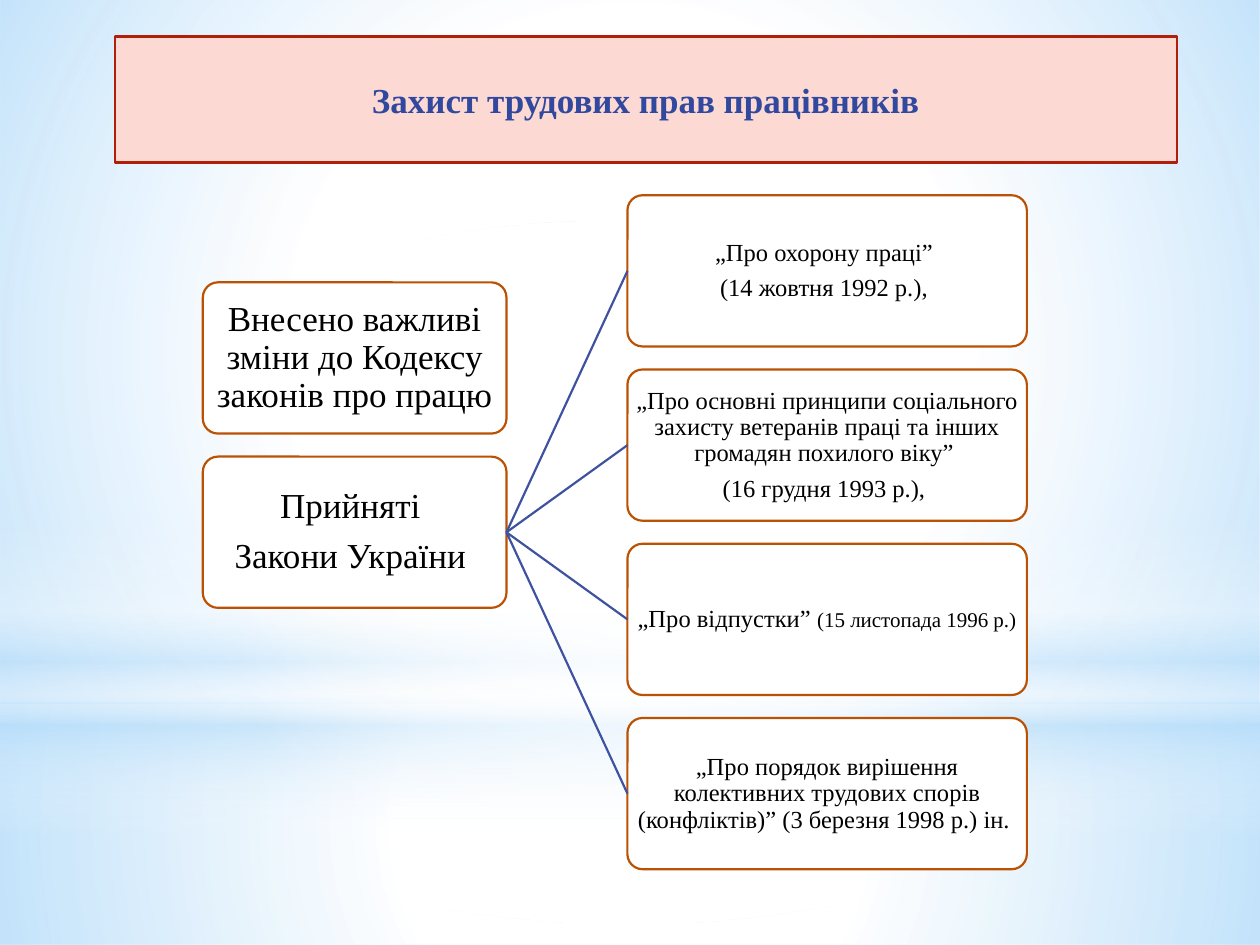
from dataclasses import dataclass

from lxml import etree
from pptx import Presentation
from pptx import util as u
from pptx.dml.color import RGBColor
from pptx.enum import shapes, text
from pptx.oxml import parse_xml
from pptx.oxml.ns import nsdecls, qn


@dataclass(frozen=True)
class Theme:
    font: str = "Times New Roman"
    ink: str = "000000"
    white: str = "FFFFFF"
    sky: str = "B4DCFA"
    card_line: str = "BB5203"
    link: str = "3E52A0"
    ribbon: str = "FCD9D3"
    ribbon_line: str = "B01F07"
    title: str = "31489F"
    large: float = 20
    medium: float = 14
    small: float = 12
    stroke: float = 1.25


theme = Theme()
rgb = RGBColor.from_string


def gradient(stops, direction):
    """Gradient fill from (position %, colour, opacity %) stops."""
    marks = "".join(
        f'<a:gs pos="{pos * 1000}"><a:srgbClr val="{color}">'
        f'<a:alpha val="{opacity * 1000}"/></a:srgbClr></a:gs>'
        for pos, color, opacity in stops)
    return parse_xml(f'<a:gradFill {nsdecls("a")} rotWithShape="1">'
                     f'<a:gsLst>{marks}</a:gsLst>{direction}</a:gradFill>')


def write(shape, paragraphs, color=theme.ink, bold=False, spacing=None, after=0, inset=0.01):
    """Fill a shape with paragraphs, each a list of (text, size) runs."""
    frame = shape.text_frame
    frame.word_wrap = True
    frame.auto_size = text.MSO_AUTO_SIZE.NONE
    frame.vertical_anchor = text.MSO_ANCHOR.MIDDLE
    frame.margin_left = frame.margin_right = u.Inches(inset)
    frame.margin_top = frame.margin_bottom = u.Inches(min(inset, 0.05))
    for i, runs in enumerate(paragraphs):
        para = frame.add_paragraph() if i else frame.paragraphs[0]
        para.alignment = text.PP_ALIGN.CENTER
        para.line_spacing = spacing
        para.space_after = u.Pt(after * runs[0][1])
        for words, size in runs:
            run = para.add_run()
            run.text = words
            run.font.name, run.font.size, run.font.bold = theme.font, u.Pt(size), bold
            run.font.color.rgb = rgb(color)


prs = Presentation()
prs.slide_width, prs.slide_height = u.Inches(10), u.Inches(7.5)
slide = prs.slides.add_slide(prs.slide_layouts[5])
slide.background.fill.solid()
slide.background.fill.fore_color.rgb = rgb(theme.white)

# Backdrop: horizon glow, as shares of the slide height
radial = ('<a:path path="circle"><a:fillToRect l="50000" t="50000" '
          'r="50000" b="50000"/></a:path>')
vertical = '<a:lin ang="5400000" scaled="0"/>'
white, sky = theme.white, theme.sky
rect, oval = shapes.MSO_SHAPE.RECTANGLE, shapes.MSO_SHAPE.OVAL
horizon = 0.744
backdrop = [
    (rect, horizon, 1 - horizon, [(0, white, 91), (37, white, 76), (100, sky, 79)], radial),
    (rect, 0, horizon, [(0, white, 89), (48, white, 62), (100, sky, 79)], radial),
    (rect, 0.55, 0.333, [(0, white, 0), (29, white, 30), (45, sky, 40), (55, white, 26),
                         (65, sky, 60), (100, white, 0)], vertical),
    (oval, 0.233, horizon, [(0, white, 100), (56, white, 0)], radial),
]
for kind, top, height, stops, direction in backdrop:
    layer = slide.shapes.add_shape(kind, 0, int(top * prs.slide_height),
                                   prs.slide_width, int(height * prs.slide_height))
    layer.shadow.inherit = False
    layer.line.fill.background()
    layer.fill.background()
    no_fill = layer._element.spPr.find(qn("a:noFill"))
    layer._element.spPr.replace(no_fill, gradient(stops, direction))

# Cards: (left, width) columns; rows may be half steps
first_row, row_step, card_height = 1.55, 1.383, 1.2
causes, laws = (1.61, 2.41), (4.98, 3.17)
L, M, S = theme.large, theme.medium, theme.small
cards = [
    (causes, 0.5, [[("Внесено важливі зміни до Кодексу законів про працю", L)]]),
    (causes, 1.5, [[("Прийняті ", L)], [("Закони України ", L)]]),
    (laws, 0, [[("„Про охорону праці” ", M)], [("(14 жовтня 1992 р.), ", M)]]),
    (laws, 1, [[("„Про основні принципи соціального захисту ветеранів праці "
                 "та інших громадян похилого віку” ", M)],
               [("(16 грудня 1993 р.), ", M)]]),
    (laws, 2, [[("„Про відпустки” ", M), ("(15 листопада 1996 p.)", S)]]),
    (laws, 3, [[("„Про порядок вирішення колективних трудових спорів (конфліктів)” "
                 "(3 березня 1998 р.) ін. ", M)]]),
]
drawn = []
for (left, width), row, paragraphs in cards:
    card = slide.shapes.add_shape(
        shapes.MSO_SHAPE.ROUNDED_RECTANGLE, u.Inches(left),
        u.Inches(first_row + row * row_step), u.Inches(width), u.Inches(card_height))
    card.adjustments[0] = 0.1
    card.shadow.inherit = False
    card.fill.solid()
    card.fill.fore_color.rgb = rgb(theme.white)
    card.line.color.rgb = rgb(theme.card_line)
    card.line.width = u.Pt(theme.stroke)
    write(card, paragraphs, spacing=0.9, after=0.35)
    drawn.append(card)

# The adopted laws branch out of the second card
adopted, *law_cards = drawn[1:]
for law in law_cards:
    link = slide.shapes.add_connector(shapes.MSO_CONNECTOR.STRAIGHT, 0, 0, 0, 0)
    link.begin_connect(adopted, 3)
    link.end_connect(law, 1)
    link.line.color.rgb = rgb(theme.link)
    link.line.width = u.Pt(theme.stroke)
    etree.SubElement(link._element.spPr, qn("a:effectLst"))

# Title on a ribbon, in front of the backdrop
title = slide.shapes.title
title.left, title.top = u.Inches(0.91), u.Inches(0.29)
title.width, title.height = u.Inches(8.43), u.Inches(1)
title._element.spPr.insert(1, parse_xml(
    f'<a:prstGeom {nsdecls("a")} prst="ribbon"><a:avLst/></a:prstGeom>'))
title.fill.solid()
title.fill.fore_color.rgb = rgb(theme.ribbon)
title.line.color.rgb = rgb(theme.ribbon_line)
title.line.width = u.Pt(theme.stroke)
write(title, [[("Захист трудових прав працівників", L)]],
      color=theme.title, bold=True, inset=0.1)
slide.shapes._spTree.append(title._element)

prs.save("out.pptx")
